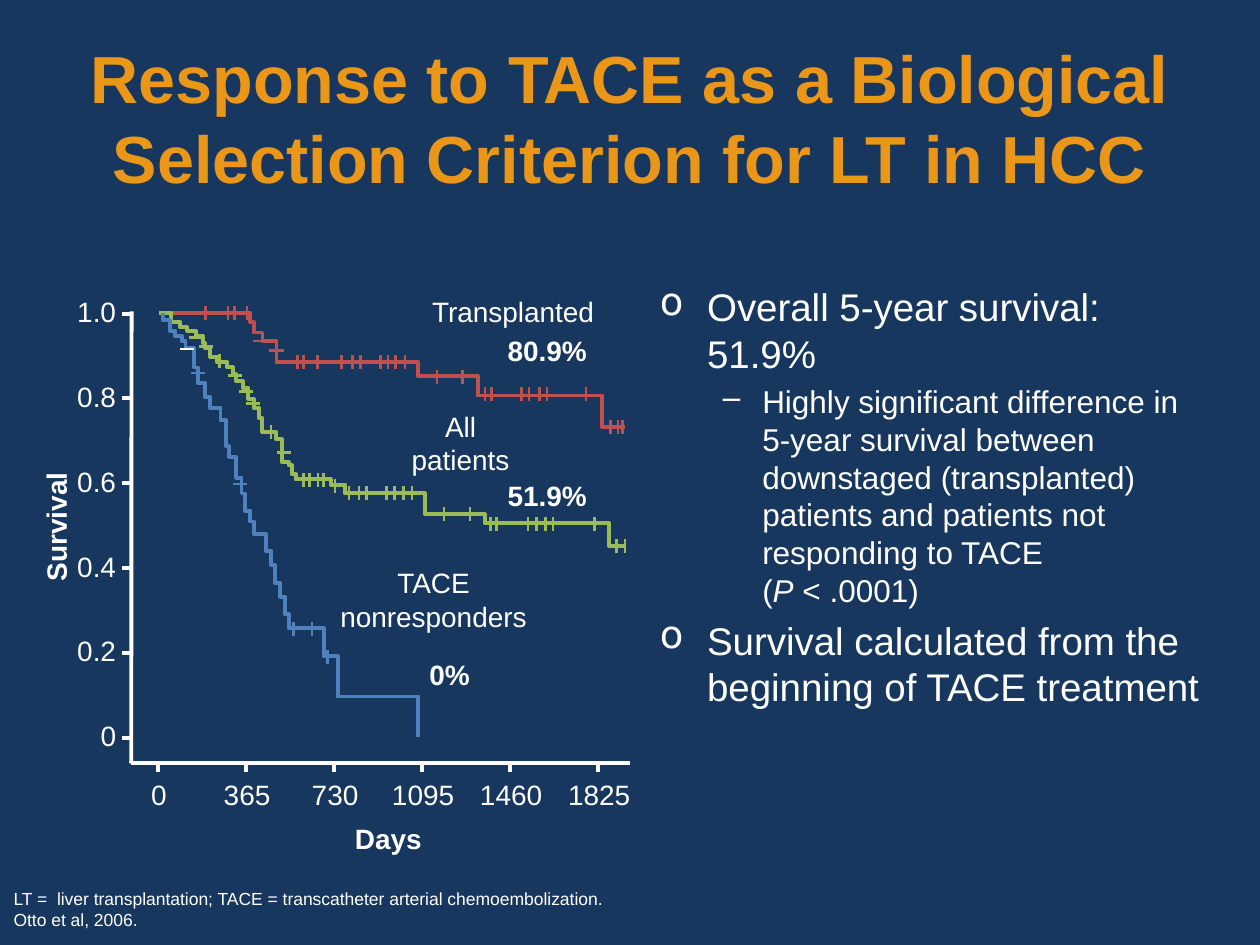
from lxml import etree
from pptx import Presentation
from pptx.dml import color
from pptx.enum import text
from pptx.oxml import ns
from pptx.util import Pt

COLORS = {"navy": "17375E", "white": "FFFFFF", "orange": "E99619",
          "red": "C0504D", "green": "9BBB59", "blue": "4F81BD"}
LEFT, CENTER, RIGHT = text.PP_ALIGN.LEFT, text.PP_ALIGN.CENTER, text.PP_ALIGN.RIGHT


def add_label(words, left, top, width, height, align=LEFT, wrap=False, hue="white", **font):
    box = slide.shapes.add_textbox(Pt(left), Pt(top), Pt(width), Pt(height))
    frame = box.text_frame
    frame.text = words
    frame.word_wrap = wrap
    for paragraph in frame.paragraphs:
        paragraph.alignment = align
        for run in paragraph.runs:
            run.font.color.rgb = color.RGBColor.from_string(COLORS[hue])
            for key, value in {"name": "Arial", "size": Pt(16), **font}.items():
                setattr(run.font, key, value)
    return box


def add_line(x1, y1, x2, y2, hue="white", weight=2.25):
    line = slide.shapes.add_connector(1, Pt(x1), Pt(y1), Pt(x2), Pt(y2))
    line.line.color.rgb = color.RGBColor.from_string(COLORS[hue])
    line.line.width = Pt(weight)
    etree.SubElement(line._element.spPr, ns.qn("a:effectLst"))


deck = Presentation()
deck.slide_width, deck.slide_height = Pt(720), Pt(540)
slide = deck.slides.add_slide(deck.slide_layouts[6])
slide.background.fill.solid()
slide.background.fill.fore_color.rgb = color.RGBColor.from_string(COLORS["navy"])

title = add_label("Response to TACE as a Biological Selection Criterion for LT in HCC",
                  36, 21.6, 648, 90, CENTER, True, "orange", size=Pt(38), bold=True)
title.text_frame.vertical_anchor = text.MSO_ANCHOR.MIDDLE

findings = slide.shapes.add_textbox(Pt(370), Pt(158.4), Pt(327), Pt(345)).text_frame
findings.word_wrap = True
points = [
    (0, ["Overall 5-year survival: 51.9%"]),
    (1, ["Highly significant difference in 5-year survival between downstaged "
         "(transplanted) patients and patients not responding to TACE \v(", "P", " < .0001)"]),
    (0, ["Survival calculated from the beginning of TACE treatment"]),
]
levels = [{"size": 22, "margin": 27, "indent": -27, "bullet": "o"},
          {"size": 18, "margin": 58.5, "indent": -22.5, "bullet": "–"}]
for index, (level, pieces) in enumerate(points):
    style = levels[level]
    point = findings.add_paragraph() if index else findings.paragraphs[0]
    point.level = level
    point.space_before = Pt(style["size"] * 0.2)
    for piece in pieces:
        start = len(point.runs)
        if "\v" in piece:
            before, piece = piece.split("\v")
            point.add_run().text = before
            point.add_line_break()
        point.add_run().text = piece
        for run in point.runs[start:]:
            run.font.color.rgb = color.RGBColor.from_string(COLORS["white"])
            for key, value in {"name": "Arial", "size": Pt(style["size"]),
                               "italic": piece == "P"}.items():
                setattr(run.font, key, value)
    properties = point._p.get_or_add_pPr()
    properties.set("marL", str(Pt(style["margin"])))
    properties.set("indent", str(Pt(style["indent"])))
    bullet_color = etree.SubElement(properties, ns.qn("a:buClr"))
    etree.SubElement(bullet_color, ns.qn("a:srgbClr"), val=COLORS["white"])
    etree.SubElement(properties, ns.qn("a:buChar"), char=style["bullet"])

add_line(75.2, 178, 75, 436.2)
add_line(75, 435.8, 360, 435.8)
for step, survival in enumerate(["0", "0.2", "0.4", "0.6", "0.8", "1.0"]):
    y = 421.5 - 48.45 * step
    add_line(69.8, y, 74.8, y)
    add_label(survival, 36.7, y - 14.3, 36.7, 26.6, RIGHT)
for step, day in enumerate(["0", "365", "730", "1095", "1460", "1825"]):
    x = 90.4 + 50.3 * step
    add_line(x, 436.2, x, 441.2)
    add_label(day, x - 24.4, 440.6, 49.7, 26.6, CENTER)
add_label("Survival", -6.5, 287.3, 77, 26.6, bold=True).rotation = 270
add_label("Days", 195.8, 465.8, 53.3, 26.6, bold=True)

curves = {
    "red": [(92.2, 178.9), (142.6, 183.6), (145.4, 190.1), (149.8, 195.1), (158, 207),
            (239, 215.3), (273.4, 225.7), (343.8, 244.1), (357.1, 244.1)],
    "green": [(91.4, 178.6), (97.9, 183.6), (103, 187.2), (106.6, 189.4), (112.3, 192.2),
              (115.9, 195.8), (117.4, 199.4), (120.2, 203.8), (123.8, 206.6), (129.6, 209.5),
              (133.2, 213.8), (135.4, 218.2), (139, 221.8), (141.8, 228.2), (144.7, 232.6),
              (148.3, 239), (150.5, 247), (157.7, 250.6), (161.3, 263.9), (164.9, 266.4),
              (167, 270.7), (169.2, 274), (188.6, 277.2), (196.6, 282.2), (243.4, 293.8),
              (277.2, 298.8), (347.8, 312.5), (357.1, 312.5)],
    "blue": [(92.9, 178.6), (93.2, 182.9), (97.2, 188.6), (100.1, 191.5), (103.7, 195.1),
             (105.8, 199.4), (110.9, 209.5), (113, 218.9), (117.4, 226.8), (119.5, 233.3),
             (126, 240.5), (128.9, 254.9), (131, 261.4), (134.6, 272.9), (137.5, 282.2),
             (139.7, 291.6), (143.3, 298.1), (145.4, 305.3), (151.9, 315.4), (154.8, 323.3),
             (157, 332.6), (159.8, 340.6), (163.1, 351.4), (164.9, 359.3), (184.7, 375.1),
             (193, 398.2), (239, 421.2)],
}
for hue, corners in curves.items():
    outline = slide.shapes.build_freeform(*corners[0], scale=Pt(1))
    for (_, y), (next_x, next_y) in zip(corners, corners[1:]):
        outline.add_line_segments([(next_x, y), (next_x, next_y)], close=False)
    curve = outline.convert_to_shape()
    curve.shadow.inherit = False
    curve.fill.background()
    curve.line.color.rgb = color.RGBColor.from_string(COLORS[hue])
    curve.line.width = Pt(2.25)

upright_ticks = {
    "red": {243.9: [355.7, 353.2, 348.8],
            225: [334.8, 312.5, 308.2, 302.4, 298.1, 280.8, 277.2],
            215.6: [264.2, 249.8],
            206.8: [231.5, 226.1, 221.8, 217.4, 205.9, 201.6, 195.1, 181.4, 173.5, 169.9],
            178.6: [141.1, 133.9, 130.3, 117.4]},
    "green": {311.8: [357.1, 352.4],
              299.2: [339.8, 316.1, 311.8, 306.7, 301.7, 283.7, 280.4],
              293.8: [268.6, 253.8],
              282: [235.4, 230.4, 225.4, 221, 209.5, 205.2, 199.4],
              277.6: [191.5], 274.3: [185, 181.8, 176.8, 173.5],
              246.6: [154.8], 206.3: [125.3]},
    "blue": {375.5: [187.2], 359.3: [178.2, 167.8]},
}
level_ticks = {
    "red": [(158, 200.2), (148.7, 194.8)],
    "green": [(162.4, 258.5), (144.4, 230.4), (140.8, 223.9), (134.3, 214.6),
              (117.7, 198), (112, 193)],
    "blue": [(137.2, 276.5), (113.4, 213.1)],
    "white": [(106.9, 199.4)],
}
for hue, rows in upright_ticks.items():
    for y, row in rows.items():
        for x in row:
            add_line(x, y - 4, x, y + 4, hue, 1.5)
for hue, centers in level_ticks.items():
    for x, y in centers:
        add_line(x - 4, y, x + 4, y, hue, 1.5)

add_label("Transplanted", 239.8, 164.9, 113.8, 26.6, wrap=True)
add_label("All patients", 220.3, 230.4, 85.7, 46, CENTER, True)
add_label("TACE nonresponders", 185.8, 319.7, 123.8, 46, CENTER, True)
for rate, left, top, width in [("80.9%", 283, 187.2, 61.2), ("51.9%", 283, 270, 61.2),
                               ("0%", 238.3, 372.2, 38.9)]:
    add_label(rate, left, top, width, 26.6, bold=True)
add_label("LT =  liver transplantation; TACE = transcatheter arterial chemoembolization.\n"
          "Otto et al, 2006.", 0.7, 504, 355.7, 31.7, size=Pt(10))

deck.save("out.pptx")
